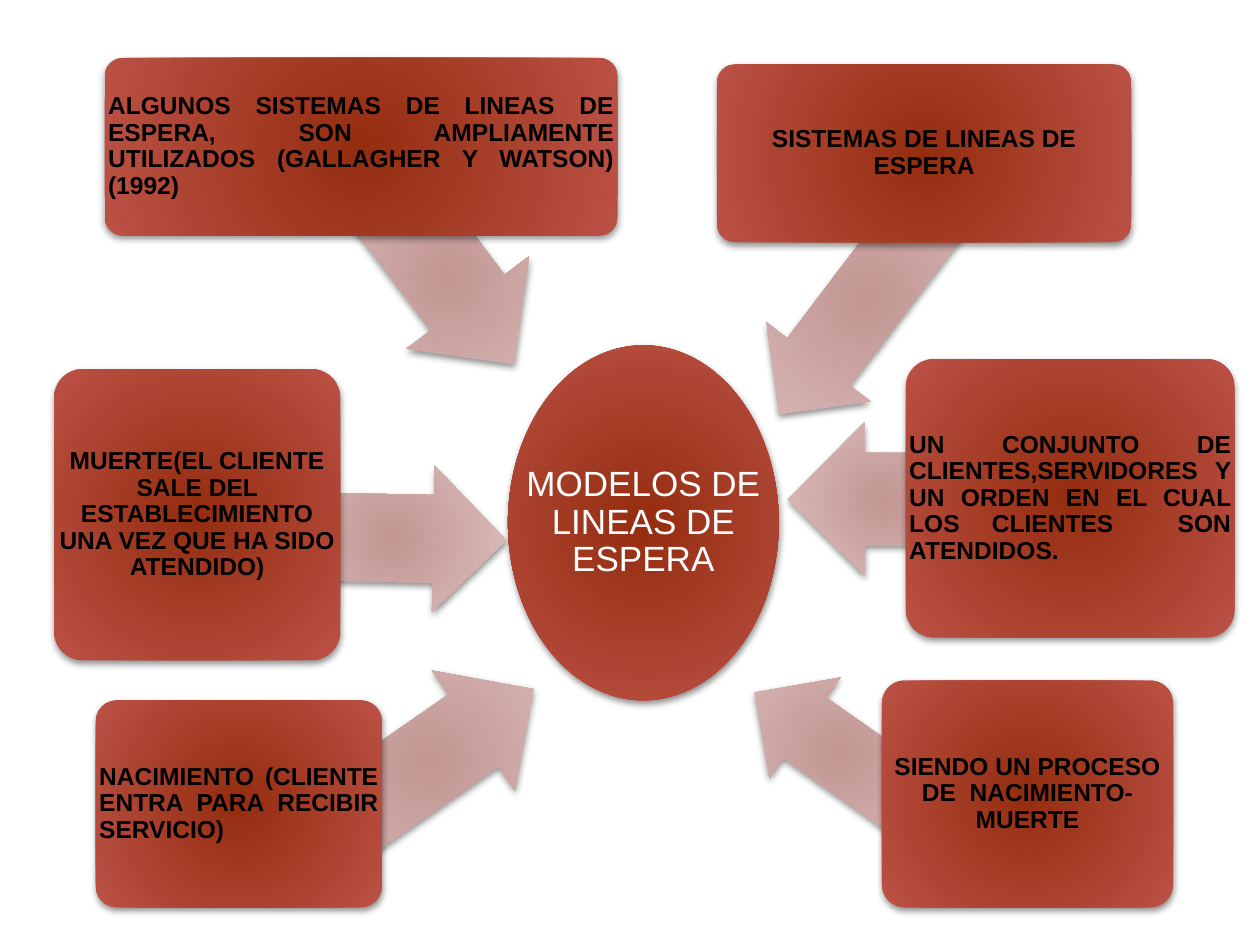
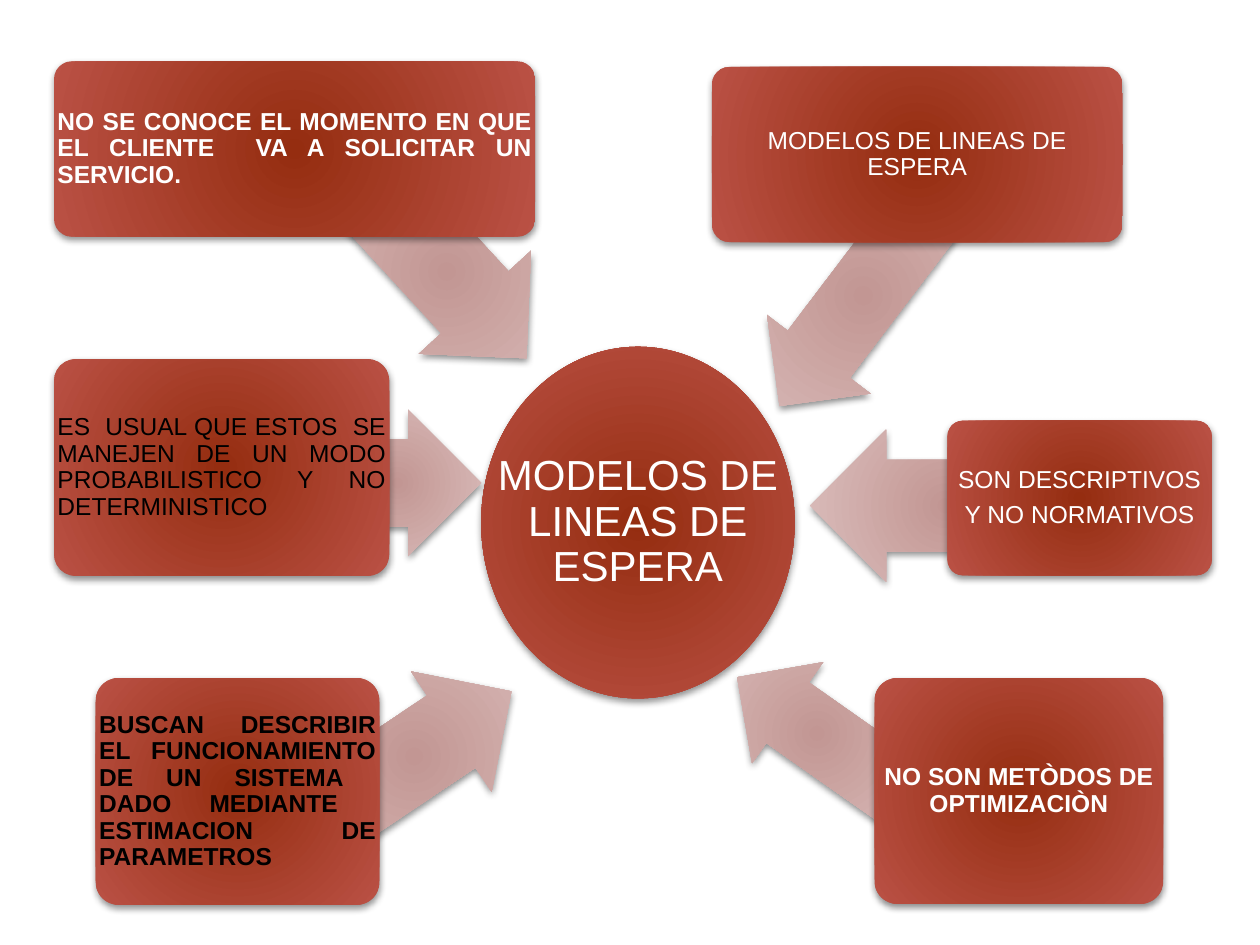
from lxml import etree
from pptx import Presentation
from pptx.dml.color import RGBColor as Rgb
from pptx.enum.shapes import MSO_SHAPE as Kind
from pptx.enum.text import MSO_ANCHOR as Anchor, PP_ALIGN as Align
from pptx.oxml import parse_xml
from pptx.oxml.ns import nsdecls, qn
from pptx.util import Cm, Pt

HUE = {"core": "952D10", "rim": "BA5145", "pale": "C29693", "blush": "DBBEBC",
       "dark": "000000", "light": "FFFFFF"}
FONT = "Arial"
HUB = "MODELOS DE LINEAS DE ESPERA"
MID, JUST = Align.CENTER, Align.JUSTIFY

# Each spoke: text, box, arrow, arrow turn, alignment, ink, bold.
# Places are left, top, width, height in cm.
SLIDES = [
    {"hub": (10.24, 6.96, 5.46, 7.16), "size": 20, "spokes": [
        ("NACIMIENTO (CLIENTE ENTRA PARA RECIBIR SERVICIO)",
         (1.93, 14.12, 5.77, 4.17), (6.1, 13.87, 5.11, 2.95), 145.3,
         JUST, "dark", True),
        ("MUERTE(EL CLIENTE SALE DEL ESTABLECIMIENTO UNA VEZ QUE HA SIDO "
         "ATENDIDO)",
         (1.09, 7.44, 5.77, 5.87), (5.64, 9.37, 4.57, 2.95), 181.1,
         MID, "dark", True),
        ("ALGUNOS SISTEMAS DE LINEAS DE ESPERA, SON AMPLIAMENTE UTILIZADOS "
         "(GALLAGHER Y WATSON)(1992)",
         (2.11, 1.17, 10.34, 3.58), (6.86, 4.04, 4.37, 3.1), 233,
         JUST, "dark", True),
        ("SISTEMAS DE LINEAS DE ESPERA",
         (14.45, 1.3, 8.36, 3.58), (14.55, 4.7, 5.84, 2.64), 307.2,
         MID, "dark", True),
        ("UN CONJUNTO DE CLIENTES,SERVIDORES Y UN ORDEN EN EL CUAL LOS "
         "CLIENTES  SON ATENDIDOS.",
         (18.26, 7.24, 6.63, 5.61), (15.88, 8.51, 3.84, 3.1), 359.8,
         JUST, "dark", True),
        ("SIENDO UN PROCESO DE  NACIMIENTO-MUERTE",
         (17.78, 13.72, 5.87, 4.57), (14.83, 13.92, 4.19, 2.49), 35.1,
         MID, "dark", True),
    ]},
    {"hub": (9.7, 6.99, 6.32, 7.09), "size": 24, "spokes": [
        ("BUSCAN DESCRIBIR EL FUNCIONAMIENTO DE UN SISTEMA  DADO MEDIANTE  "
         "ESTIMACION DE PARAMETROS",
         (1.93, 13.67, 5.72, 4.57), (5.99, 13.79, 4.72, 2.92), 146.2,
         JUST, "dark", True),
        ("ES  USUAL QUE ESTOS  SE MANEJEN DE UN MODO PROBABILISTICO Y NO "
         "DETERMINISTICO",
         (1.09, 7.24, 6.76, 4.37), (6.32, 8.26, 3.38, 2.95), 180,
         JUST, "dark", False),
        ("NO SE CONOCE EL MOMENTO EN QUE EL CLIENTE  VA A SOLICITAR UN "
         "SERVICIO.",
         (1.09, 1.24, 9.7, 3.53), (6.63, 3.94, 4.75, 3.07), 227.4,
         JUST, "light", True),
        ("MODELOS DE LINEAS DE ESPERA",
         (14.35, 1.35, 8.28, 3.53), (14.61, 4.65, 5.59, 2.62), 307.2,
         MID, "light", False),
        ("SON DESCRIPTIVOS\nY NO NORMATIVOS",
         (19.1, 8.48, 5.33, 3.12), (16.33, 8.66, 5.44, 3.07), 0,
         MID, "light", False),
        ("NO SON METÒDOS DE OPTIMIZACIÒN",
         (17.63, 13.67, 5.82, 4.55), (14.5, 13.54, 3.94, 2.49), 35.1,
         MID, "light", True),
    ]},
]


def glow(shape, core, rim):
    """Give a round gradient, no outline and a soft shadow below."""
    shape.line.fill.background()
    shape.shadow.inherit = False
    props = shape.element.spPr
    props.find(qn("a:ln")).addprevious(parse_xml(
        f'<a:gradFill {nsdecls("a")} rotWithShape="1"><a:gsLst>'
        f'<a:gs pos="0"><a:srgbClr val="{HUE[core]}"/></a:gs>'
        f'<a:gs pos="100000"><a:srgbClr val="{HUE[rim]}"/></a:gs></a:gsLst>'
        '<a:path path="circle"><a:fillToRect l="40000" t="100000" '
        'r="40000" b="100000"/></a:path></a:gradFill>'))
    shade = etree.SubElement(
        props.find(qn("a:effectLst")), qn("a:outerShdw"), blurRad="50800",
        dist="25400", dir="5040000", algn="tl", rotWithShape="0")
    tint = etree.SubElement(shade, qn("a:srgbClr"), val=HUE["dark"])
    etree.SubElement(tint, qn("a:alpha"), val="44000")


def draw(slide, kind, place, core="core", rim="rim", adjust=(), turn=0):
    shape = slide.shapes.add_shape(kind, *map(Cm, place))
    for i, value in enumerate(adjust):
        shape.adjustments[i] = value
    shape.rotation = turn
    glow(shape, core, rim)


def write(slide, text, place, size, align, ink, bold, inset):
    frame = slide.shapes.add_textbox(*map(Cm, place)).text_frame
    frame.word_wrap = True
    frame.vertical_anchor = Anchor.MIDDLE
    frame.margin_left = frame.margin_right = Cm(inset)
    frame.margin_top = frame.margin_bottom = Cm(inset)
    frame.text = text
    for para in frame.paragraphs:
        para.alignment = align
        para.line_spacing = 0.9
        para.space_after = Pt(size * 0.35)
        for run in para.runs:
            font = run.font
            font.name, font.size, font.bold = FONT, Pt(size), bold
            font.color.rgb = Rgb.from_string(HUE[ink])


def main():
    deck = Presentation()
    deck.slide_width, deck.slide_height = Cm(25.4), Cm(19.05)
    for page in SLIDES:
        slide = deck.slides.add_slide(deck.slide_layouts[6])
        draw(slide, Kind.OVAL, page["hub"])
        write(slide, HUB, page["hub"], page["size"], MID, "light", False, 0.04)
        for text, box, arrow, turn, align, ink, bold in page["spokes"]:
            draw(slide, Kind.LEFT_ARROW, arrow, "pale", "blush", (0.6, 0.5), turn)
            draw(slide, Kind.ROUNDED_RECTANGLE, box, adjust=(0.1,))
            write(slide, text, box, 14, align, ink, bold, 0.07)
    deck.save("out.pptx")


if __name__ == "__main__":
    main()
